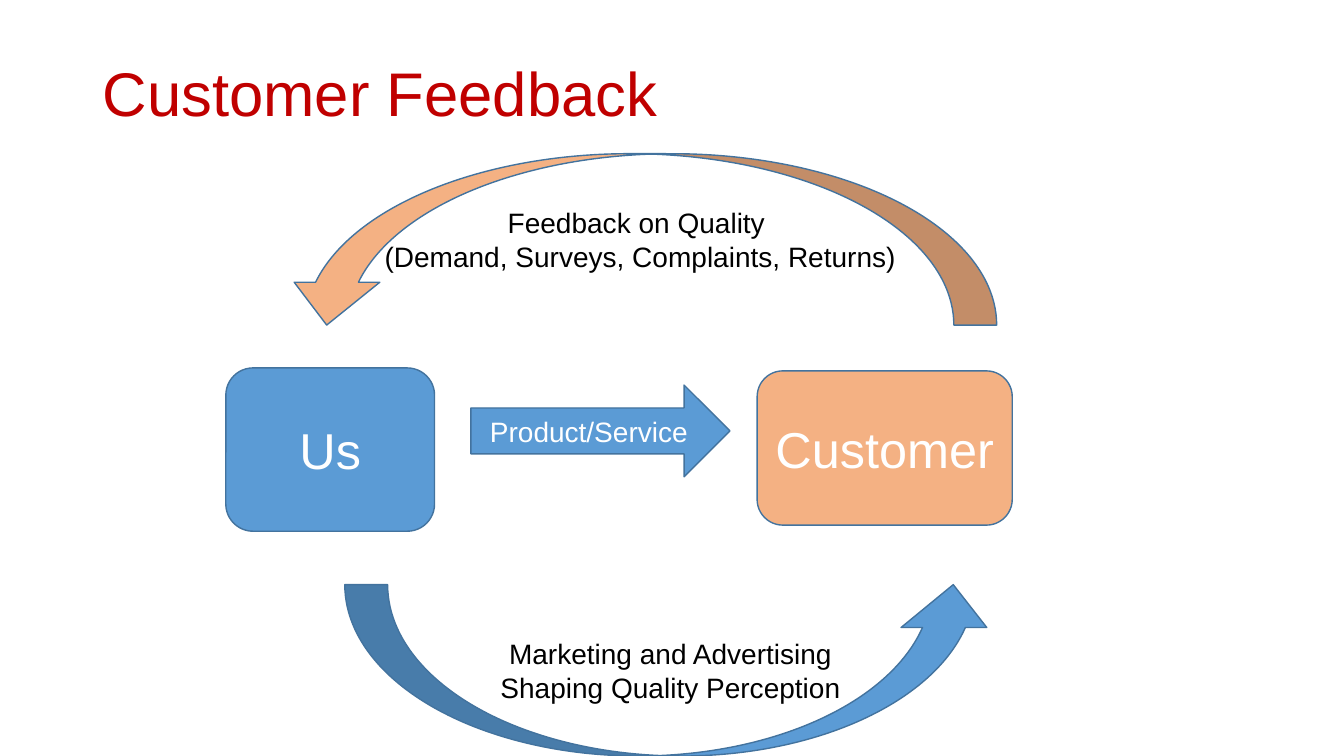
from pptx import Presentation
from pptx.dml.color import RGBColor
from pptx.enum.shapes import MSO_SHAPE
from pptx.enum.text import MSO_ANCHOR, PP_ALIGN
from pptx.util import Pt

ROUND = MSO_SHAPE.ROUNDED_RECTANGLE
ARROW = MSO_SHAPE.RIGHT_ARROW
CURVE = MSO_SHAPE.CURVED_RIGHT_ARROW
MIDDLE = MSO_ANCHOR.MIDDLE
CENTER, LEFT = PP_ALIGN.CENTER, PP_ALIGN.LEFT

PX = 9144
SLIDE = (1333, 750)
BLUE, ORANGE, EDGE = "5B9BD5", "F4B183", "43739E"
WHITE, BLACK, RED = "FFFFFF", "000000", "C00000"

TITLE = ("Customer Feedback", (92, 40, 1150, 112))
BLOCKS = [
    (ROUND, (224, 365, 207, 162), BLUE, "Us", 36),
    (ARROW, (467, 382, 257, 91), BLUE, "Product/Service", 20),
    (ROUND, (751, 368, 253, 153), ORANGE, "Customer", 36),
]
LOOPS = [
    ((550, -116, 170, 707), 90, "vert270", ORANGE,
     ["Feedback on Quality ", "(Demand, Surveys, Complaints, Returns)"]),
    ((580, 342, 170, 646), 270, "vert", BLUE,
     ["Marketing and Advertising", "Shaping Quality Perception"]),
]


def rgb(value):
    return RGBColor.from_string(value)


def emu(box):
    return [v * PX for v in box]


def write(sp, lines, size, color, align=CENTER, spacing=None):
    tf = sp.text_frame
    tf.word_wrap = True
    tf.vertical_anchor = MIDDLE
    for i, line in enumerate(lines):
        p = tf.add_paragraph() if i else tf.paragraphs[0]
        p.alignment = align
        p.line_spacing = spacing
        r = p.add_run()
        r.text = line
        for name, value in {"name": "Arial", "size": Pt(size)}.items():
            setattr(r.font, name, value)
        r.font.color.rgb = rgb(color)


def add_block(s, kind, box, fill, lines, size, color):
    sp = s.shapes.add_shape(kind, *emu(box))
    sp.shadow.inherit = False
    sp.fill.solid()
    sp.fill.fore_color.rgb = rgb(fill)
    sp.line.color.rgb = rgb(EDGE)
    sp.line.width = Pt(1)
    write(sp, lines, size, color)
    return sp


def main():
    prs = Presentation()
    prs.slide_width, prs.slide_height = emu(SLIDE)
    s = prs.slides.add_slide(prs.slide_layouts[6])
    text, box = TITLE
    write(s.shapes.add_textbox(*emu(box)), [text], 44, RED, LEFT, 0.9)
    for kind, box, fill, text, size in BLOCKS:
        add_block(s, kind, box, fill, [text], size, WHITE)
    for box, turn, direction, fill, lines in LOOPS:
        sp = add_block(s, CURVE, box, fill, lines, 20, BLACK)
        sp.rotation = turn
        sp.text_frame._txBody.bodyPr.set("vert", direction)
    prs.save("out.pptx")


if __name__ == "__main__":
    main()
